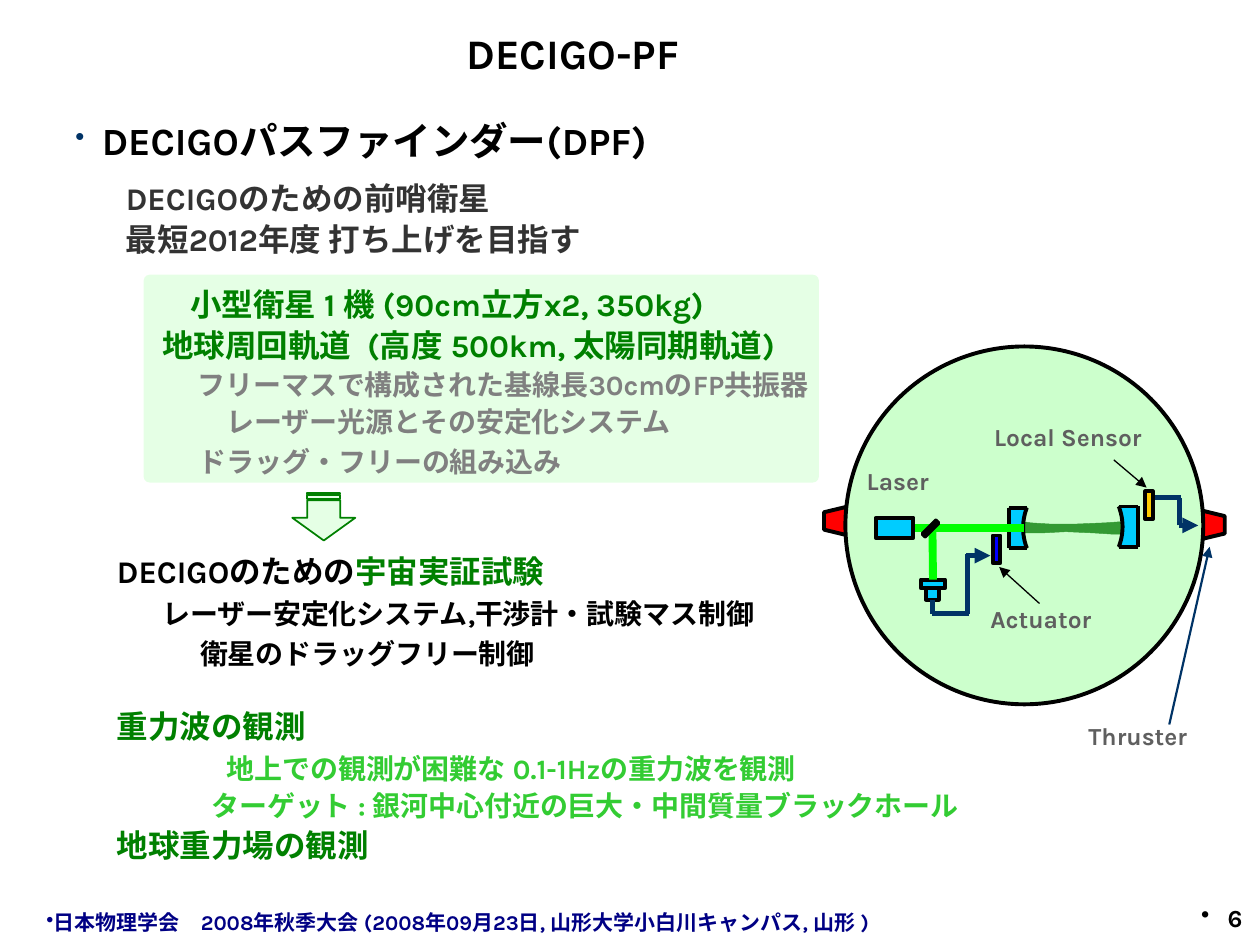
from dataclasses import dataclass

import pptx
import pptx.dml.color
import pptx.enum.dml
import pptx.enum.lang
import pptx.enum.shapes
import pptx.enum.text
import pptx.oxml
import pptx.oxml.ns
import pptx.util
from pptx.util import Inches

COLORS = {
    "black": "000000", "navy": "000084", "wire": "003366", "dark": "333333",
    "label": "5F5F5F", "gray": "808080", "green": "008000", "lime": "33CC33",
    "pale": "CCFFCC", "red": "FF0000", "cyan": "00CCFF", "beam": "00FF00",
    "cavity": "339933", "blue": "0000FF", "amber": "FFCC00",
}
FONT = "Karla"
SHAPES = pptx.enum.shapes.MSO_SHAPE
ALIGN = pptx.enum.text.PP_ALIGN
ANCHOR = pptx.enum.text.MSO_ANCHOR
Point = tuple[float, float]


@dataclass
class Line:
    runs: list[tuple[str, str]]  # text, colour name
    size: float
    indent: float = 0
    spacing: float = 1.1
    before: float = 0
    align: ALIGN = ALIGN.LEFT
    bullet: str = ""  # colour name of the bullet
    hanging: float = 0
    bullet_size: int = 100


@dataclass
class Wire:
    start: Point
    end: Point
    color: str = "wire"
    width: float = 3
    arrow: bool = False


@dataclass
class Part:
    kind: SHAPES
    box: tuple[float, float, float, float]
    fill: str
    rotation: float = 0


@dataclass
class CavityMirror:
    back: float
    edge: float
    control: float
    top: float
    bottom: float


def rgb(name: str) -> pptx.dml.color.RGBColor:
    return pptx.dml.color.RGBColor.from_string(COLORS[name])


def add_xml(parent, xml: str):
    namespace = pptx.oxml.ns.nsdecls("a")
    element = pptx.oxml.parse_xml(xml.replace("/>", f" {namespace}/>", 1) if xml.count("<") == 1
                                  else xml.replace(">", f" {namespace}>", 1))
    parent.append(element)


def add_text(slide, box, lines: list[Line], anchor=ANCHOR.TOP, insets=(0.1, 0.05)) -> None:
    frame = slide.shapes.add_textbox(*map(Inches, box)).text_frame
    frame.word_wrap = True
    frame.vertical_anchor = anchor
    frame.margin_left = frame.margin_right = Inches(insets[0])
    frame.margin_top = frame.margin_bottom = Inches(insets[1])
    for index, line in enumerate(lines):
        paragraph = frame.paragraphs[0] if index == 0 else frame.add_paragraph()
        paragraph.alignment = line.align
        paragraph.line_spacing = line.spacing
        paragraph.space_before = pptx.util.Pt(line.before)
        properties = paragraph._p.get_or_add_pPr()
        properties.set("marL", str(Inches(line.indent + line.hanging)))
        properties.set("indent", str(-Inches(line.hanging)))
        if line.bullet:
            add_xml(properties, f'<a:buClr><a:srgbClr val="{COLORS[line.bullet]}"/></a:buClr>')
            add_xml(properties, f'<a:buSzPct val="{line.bullet_size * 1000}"/>')
            add_xml(properties, '<a:buChar char="•"/>')
        for text, color in line.runs:
            run = paragraph.add_run()
            run.text = text
            run.font.name = FONT
            run.font.size = pptx.util.Pt(line.size)
            run.font.bold = True
            run.font.color.rgb = rgb(color)
            run.font.language_id = pptx.enum.lang.MSO_LANGUAGE_ID.JAPANESE
            add_xml(run._r.get_or_add_rPr(), f'<a:ea typeface="{FONT}"/>')


def style(shape, fill: str | None, line: str | None, width: float = 2.25, alpha: int = 100) -> None:
    shape.shadow.inherit = False
    if fill:
        shape.fill.solid()
        shape.fill.fore_color.rgb = rgb(fill)
        if alpha < 100:
            color = shape.fill._xPr.find(".//" + pptx.oxml.ns.qn("a:srgbClr"))
            add_xml(color, f'<a:alpha val="{alpha * 1000}"/>')
    else:
        shape.fill.background()
    if line:
        shape.line.color.rgb = rgb(line)
        shape.line.width = pptx.util.Pt(width)
    else:
        shape.line.fill.background()


def add_part(slide, part: Part):
    shape = slide.shapes.add_shape(part.kind, *map(Inches, part.box))
    shape.rotation = part.rotation
    style(shape, part.fill, "black")
    return shape


def add_wire(slide, wire: Wire):
    connector = slide.shapes.add_connector(
        pptx.enum.shapes.MSO_CONNECTOR.STRAIGHT, *map(Inches, wire.start + wire.end))
    connector.line.color.rgb = rgb(wire.color)
    connector.line.width = pptx.util.Pt(wire.width)
    if wire.arrow:
        add_xml(connector.line._get_or_add_ln(), '<a:tailEnd type="triangle"/>')
    add_xml(connector._element.spPr, "<a:effectLst/>")
    return connector


def add_outline(slide, contours: list[list[Point]], closed: bool = True):
    contours = [[(Inches(x), Inches(y)) for x, y in contour] for contour in contours]
    builder = slide.shapes.build_freeform(*contours[0][0])
    for index, contour in enumerate(contours):
        if index:
            builder.move_to(*contour[0])
        builder.add_line_segments(contour[1:], close=closed)
    return builder.convert_to_shape()


def add_cavity_mirror(slide, mirror: CavityMirror) -> None:
    """Draw a block whose inner face is a cubic arc, then its thick edges."""
    arc = []
    for step in range(13):
        t = step / 12
        bend = 3 * t * (1 - t)
        arc.append((mirror.edge + (mirror.control - mirror.edge) * bend,
                    mirror.bottom + (mirror.top - mirror.bottom) * t))
    corners = [(mirror.back, mirror.top), (mirror.back, mirror.bottom)]
    style(add_outline(slide, [corners + arc]), "cyan", "black", 0.75)
    for start, end in [(corners[0], corners[1]), (corners[0], arc[-1]), (corners[1], arc[0])]:
        add_wire(slide, Wire(start, end, "black", 2.25))
    style(add_outline(slide, [arc], closed=False), None, "black")


def add_texts(slide) -> None:
    add_text(slide, (0.27, 7.14, 9.53, 0.33), [
        Line([("日本物理学会　2008年秋季大会 (2008年09月23日, 山形大学小白川キャンパス, 山形 )", "navy")],
             12, spacing=1, bullet="navy")], ANCHOR.BOTTOM)
    add_text(slide, (9.21, 7.2, 0.75, 0.25), [
        Line([("6", "black")], 14, spacing=1, align=ALIGN.RIGHT, bullet="black", hanging=0.21)],
        ANCHOR.BOTTOM)
    add_text(slide, (0.92, 0.07, 7.25, 0.61), [
        Line([("DECIGO-PF", "black")], 24, spacing=1.2, align=ALIGN.CENTER)], ANCHOR.MIDDLE)
    add_text(slide, (0.5, 0.84, 9.17, 6.22), [
        Line([("DECIGOパスファインダー(DPF)", "black")], 22, bullet="wire", hanging=0.21,
             bullet_size=70)])

    panel = slide.shapes.add_shape(SHAPES.ROUNDED_RECTANGLE, *map(Inches, (1.14, 2.18, 5.36, 1.65)))
    panel.adjustments[0] = 0.03
    style(panel, "pale", None, alpha=50)
    add_text(slide, (0.91, 2.18, 6.22, 1.68), [
        Line([("小型衛星 1 機 (90cm立方x2, 350kg)", "green")], 18, 0.5),
        Line([("地球周回軌道  (高度 500km, 太陽同期軌道)", "green")], 18, 0.28),
        Line([("フリーマスで構成された基線長30cmのFP共振器", "gray")], 16, 0.56),
        Line([("レーザー光源とその安定化システム", "gray")], 16, 0.79),
        Line([("ドラッグ・フリーの組み込み", "gray")], 16, 0.57, before=2)])
    add_text(slide, (0.83, 5.56, 7, 1.35), [
        Line([("重力波の観測", "green")], 18, spacing=1),
        Line([("地上での観測が困難な 0.1-1Hzの重力波を観測", "lime")], 16, 0.87, before=2),
        Line([("ターゲット : 銀河中心付近の巨大・中間質量ブラックホール", "lime")], 16, 0.75),
        Line([("地球重力場の観測", "green")], 18)])
    add_text(slide, (0.83, 4.33, 7, 1.04), [
        Line([("DECIGOのための", "black"), ("宇宙実証試験", "green")], 18, spacing=1),
        Line([("レーザー安定化システム,干渉計・試験マス制御", "black")], 16, 0.36, 1.2),
        Line([("衛星のドラッグフリー制御", "black")], 16, 0.66, 1.2)])

    bars = [[(2.7, top), (2.44, top), (2.44, bottom), (2.7, bottom)]
            for top, bottom in [(3.93, 3.96), (3.91, 3.92)]]
    arrow = [(2.82, 4.11), (2.7, 4.11), (2.7, 3.97), (2.44, 3.97), (2.44, 4.11),
             (2.32, 4.11), (2.57, 4.29)]
    style(add_outline(slide, [arrow] + bars), "pale", "green", 1, alpha=50)
    add_text(slide, (0.9, 1.34, 6.22, 0.76), [
        Line([("DECIGOのための前哨衛星", "dark")], 18),
        Line([("最短2012年度 打ち上げを目指す", "dark")], 18)])


def add_satellite(slide) -> None:
    for part in [
        Part(SHAPES.FLOWCHART_MANUAL_OPERATION, (6.52, 4.04, 0.23, 0.19), "red", 90),
        Part(SHAPES.FLOWCHART_MANUAL_OPERATION, (9.51, 4.07, 0.23, 0.19), "red", 270),
        Part(SHAPES.OVAL, (6.71, 2.75, 2.84, 2.84), "pale"),
        Part(SHAPES.RECTANGLE, (7.88, 4.25, 0.06, 0.22), "blue"),
    ]:
        add_part(slide, part)

    detector_base = add_part(slide, Part(SHAPES.RECTANGLE, (7.35, 4.66, 0.1, 0.1), "cyan"))
    detector_head = add_part(slide, Part(SHAPES.RECTANGLE, (7.31, 4.6, 0.19, 0.07), "cyan"))
    add_wire(slide, Wire((7.4, 4.17), (7.4, 4.6), "beam", 4.5)).end_connect(detector_head, 0)
    add_wire(slide, Wire((7.4, 4.76), (7.4, 4.87))).begin_connect(detector_base, 2)

    for wire in [
        Wire((7.4, 4.87), (7.69, 4.87)),
        Wire((7.68, 4.87), (7.68, 4.4)),
        Wire((7.67, 4.41), (7.86, 4.41), arrow=True),
        Wire((9.36, 4.17), (9.36, 3.95)),
        Wire((9.37, 3.95), (9.12, 3.95)),
        Wire((9.36, 4.17), (9.51, 4.17), arrow=True),
        Wire((8.25, 4.79), (7.93, 4.5), "black", 0.75, True),
        Wire((8.84, 3.65), (9.1, 3.87), "black", 0.75, True),
        Wire((9.28, 5.75), (9.6, 4.34), "wire", 1.25, True),
    ]:
        add_wire(slide, wire)
    add_part(slide, Part(SHAPES.RECTANGLE, (9.09, 3.9, 0.06, 0.22), "amber"))

    cavity_beam = [(8.12, 4.14), (8.18, 4.15), (8.34, 4.16), (8.53, 4.16), (8.77, 4.15),
                   (8.91, 4.14), (8.92, 4.19), (8.91, 4.24), (8.84, 4.24), (8.68, 4.23),
                   (8.46, 4.22), (8.27, 4.23), (8.12, 4.23)]
    style(add_outline(slide, [cavity_beam]), "cavity", "cavity", 0.25)
    add_cavity_mirror(slide, CavityMirror(9.03, 8.88, 8.92, 4.02, 4.34))
    add_cavity_mirror(slide, CavityMirror(8.01, 8.15, 8.11, 4.03, 4.35))
    add_wire(slide, Wire((7.07, 4.19), (8.13, 4.19), "beam", 4.5))
    add_part(slide, Part(SHAPES.RECTANGLE, (6.95, 4.11, 0.3, 0.16), "cyan"))
    add_part(slide, Part(SHAPES.RECTANGLE, (7.37, 4.12, 0.03, 0.15), "cyan", 44.7))

    for text, box, insets, align in [
        ("Local Sensor", (7.63, 3.34, 1.69, 0.4), (0.08, 0.01), ALIGN.CENTER),
        ("Actuator", (7.78, 4.78, 1.1, 0.25), (0.08, 0.01), ALIGN.JUSTIFY),
        ("Thruster", (8.54, 5.67, 1.05, 0.28), (0.1, 0.05), ALIGN.JUSTIFY),
        ("Laser", (6.78, 3.65, 1.05, 0.28), (0.1, 0.05), ALIGN.JUSTIFY),
    ]:
        add_text(slide, box, [Line([(text, "label")], 14, spacing=1, align=align)], insets=insets)


def main() -> None:
    presentation = pptx.Presentation()
    presentation.slide_width, presentation.slide_height = Inches(10), Inches(7.5)
    slide = presentation.slides.add_slide(presentation.slide_layouts[6])
    add_texts(slide)
    add_satellite(slide)
    presentation.save("out.pptx")


if __name__ == "__main__":
    main()
